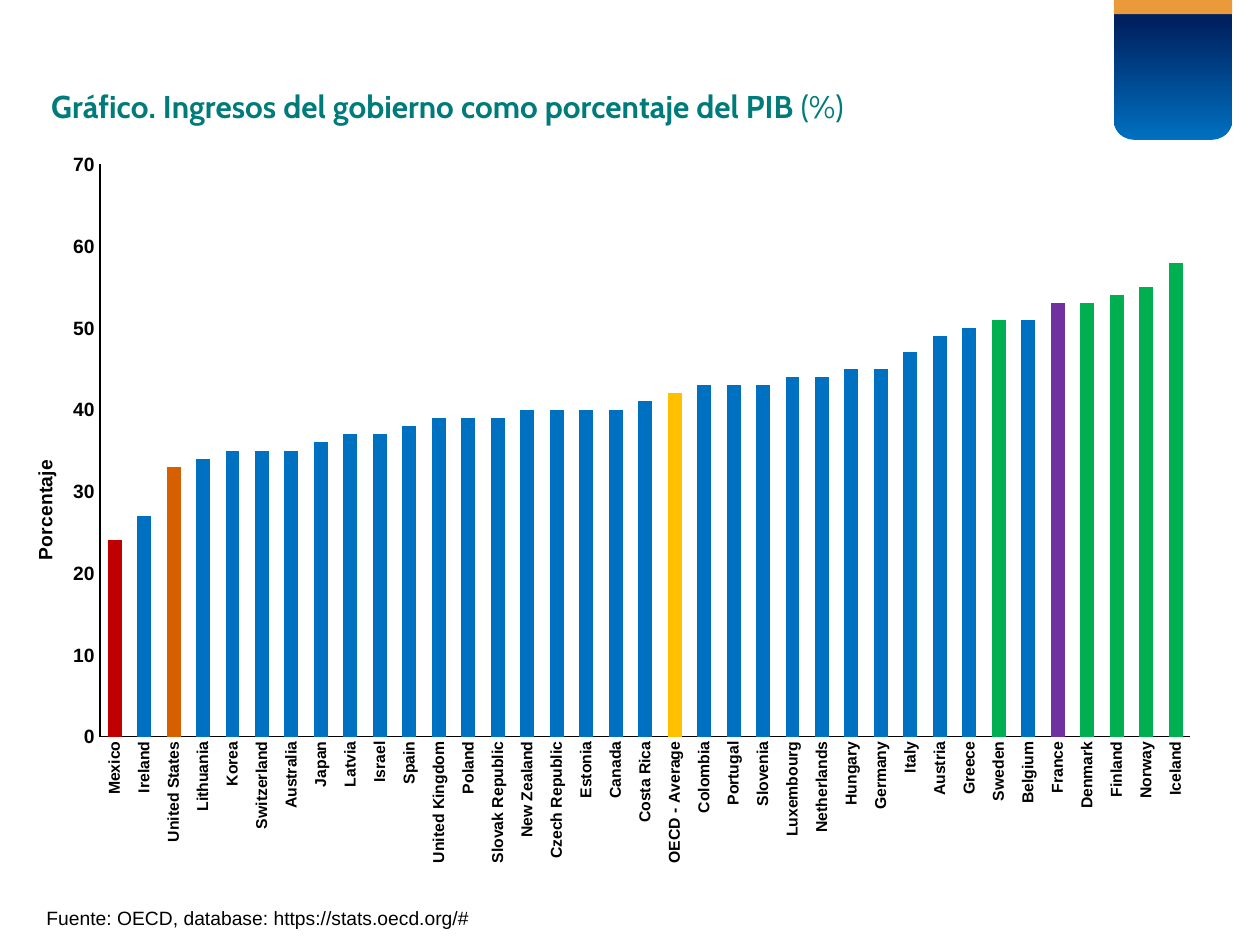
import pptx
import pptx.util
import pptx.chart.data
import pptx.dml.color
import pptx.enum.chart
import pptx.enum.shapes
import pptx.oxml
import pptx.oxml.ns

RGB = pptx.dml.color.RGBColor
BLUE = RGB(0x00, 0x70, 0xC0)
NAVY = RGB(0x00, 0x20, 0x60)
AMBER = RGB(0xEA, 0x9A, 0x39)
TEAL = RGB(0x00, 0x7B, 0x7B)
BLACK = RGB(0x00, 0x00, 0x00)
RED = RGB(0xC0, 0x00, 0x00)
RUST = RGB(0xD6, 0x60, 0x00)
GOLD = RGB(0xFF, 0xC0, 0x00)
GREEN = RGB(0x00, 0xB0, 0x50)
PLUM = RGB(0x70, 0x30, 0xA0)

Pt = pptx.util.Pt
qn = pptx.oxml.ns.qn
SHAPE = pptx.enum.shapes.MSO_SHAPE
KIND = pptx.enum.chart

deck = pptx.Presentation()
deck.slide_width = pptx.util.Inches(10)
deck.slide_height = pptx.util.Inches(7.5)
wide, high = deck.slide_width, deck.slide_height
slide = deck.slides.add_slide(deck.slide_layouts[6])


def style(font, size, color=BLACK, name="Arial", bold=True):
    font.size = Pt(size)
    font.bold = bold
    font.name = name
    font.color.rgb = color


def place(node, spot, **share):
    for old in node.findall(qn("c:layout")):
        node.remove(old)
    modes = [("xMode", "edge"), ("yMode", "edge")]
    if "w" in share:
        modes.insert(0, ("layoutTarget", "inner"))
    tags = "".join(f'<c:{tag} val="{val}"/>' for tag, val in modes + list(share.items()))
    node.insert(spot, pptx.oxml.parse_xml(
        f'<c:layout {pptx.oxml.ns.nsdecls("c")}><c:manualLayout>{tags}</c:manualLayout></c:layout>'))


left, top, span = 0.884 * wide, -0.001 * high, 0.094 * wide
badge = slide.shapes.add_shape(
    SHAPE.ROUND_2_SAME_RECTANGLE, int(left), int(top), int(span), int(0.149 * high))
badge.adjustments[0] = 0
badge.adjustments[1] = 0.17
badge.fill.gradient()
badge.fill.gradient_angle = 90
for stop, color, spot in zip(badge.fill.gradient_stops, (BLUE, NAVY), (0, 0.85)):
    stop.color.rgb = color
    stop.position = spot
band = slide.shapes.add_shape(
    SHAPE.RECTANGLE, int(left), int(top), int(span), int(0.016 * high))
band.fill.solid()
band.fill.fore_color.rgb = AMBER
for shape in (badge, band):
    shape.line.fill.background()
    shape.shadow.inherit = False

rows = [
    ("Mexico", 24), ("Ireland", 27), ("United States", 33), ("Lithuania", 34),
    ("Korea", 35), ("Switzerland", 35), ("Australia", 35), ("Japan", 36),
    ("Latvia", 37), ("Israel", 37), ("Spain", 38), ("United Kingdom", 39),
    ("Poland", 39), ("Slovak Republic", 39), ("New Zealand", 40),
    ("Czech Republic", 40), ("Estonia", 40), ("Canada", 40), ("Costa Rica", 41),
    ("OECD - Average", 42), ("Colombia", 43), ("Portugal", 43), ("Slovenia", 43),
    ("Luxembourg", 44), ("Netherlands", 44), ("Hungary", 45), ("Germany", 45),
    ("Italy", 47), ("Austria", 49), ("Greece", 50), ("Sweden", 51),
    ("Belgium", 51), ("France", 53), ("Denmark", 53), ("Finland", 54),
    ("Norway", 55), ("Iceland", 58),
]
marks = {"Mexico": RED, "United States": RUST, "OECD - Average": GOLD, "France": PLUM}
marks.update(dict.fromkeys(("Sweden", "Denmark", "Finland", "Norway", "Iceland"), GREEN))

data = pptx.chart.data.CategoryChartData()
data.categories = [land for land, rate in rows]
data.add_series("Series 1", [rate for land, rate in rows])
chart = slide.shapes.add_chart(
    KIND.XL_CHART_TYPE.COLUMN_CLUSTERED, int(0.013 * wide), int(0.055 * high),
    int(0.947 * wide), int(0.916 * high), data).chart
style(chart.font, 10)
chart.has_legend = False
place(chart.plots[0]._element.getparent(), 0, x=0.07, y=0.13, w=0.914, h=0.661)

plot = chart.plots[0]
plot.gap_width = 111
plot.overlap = -20
plot.vary_by_categories = False
bars = plot.series[0]
bars.format.fill.solid()
bars.format.fill.fore_color.rgb = BLUE
for spot, (land, rate) in enumerate(rows):
    if land in marks:
        fill = bars.points[spot].format.fill
        fill.solid()
        fill.fore_color.rgb = marks[land]

for axis, size in ((chart.category_axis, 9), (chart.value_axis, 11)):
    axis.has_major_gridlines = False
    axis.major_tick_mark = KIND.XL_TICK_MARK.NONE
    axis.minor_tick_mark = KIND.XL_TICK_MARK.NONE
    axis.format.line.color.rgb = BLACK
    axis.format.line.width = Pt(0.75)
    style(axis.tick_labels.font, size)
turn = chart.category_axis._element.find(qn("c:txPr")).find(qn("a:bodyPr"))
turn.set("rot", "-5400000")
turn.set("vert", "horz")
scale = chart.value_axis
scale.minimum_scale = 0
scale.maximum_scale = 70
scale.major_unit = 10
scale.tick_labels.number_format = "0"
scale.tick_labels.number_format_is_linked = False

scale.has_title = True
label = scale.axis_title
label.text_frame.text = "Porcentaje"
style(label.text_frame.paragraphs[0].runs[0].font, 11)
turn = label.text_frame._txBody.find(qn("a:bodyPr"))
turn.set("rot", "-5400000")
turn.set("vert", "horz")
place(label._element, 1, x=0.01, y=0.467)

chart.has_title = True
head = chart.chart_title
head.include_in_layout = False
line = head.text_frame.paragraphs[0]
line.text = "Gráfico. Ingresos del gobierno como porcentaje del PIB "
line.add_run().text = "(%)"
for run, bold in zip(line.runs, (True, False)):
    style(run.font, 18, TEAL, "Cabin", bold)
place(head._element, 1, x=0.026, y=0.035)

note = slide.shapes.add_textbox(
    int(0.027 * wide), int(0.952 * high), int(0.868 * wide), int(0.038 * high))
note.text_frame.word_wrap = True
note.text_frame.text = "Fuente: OECD, database: https://stats.oecd.org/#"
style(note.text_frame.paragraphs[0].runs[0].font, 11, bold=False)

deck.save("out.pptx")
